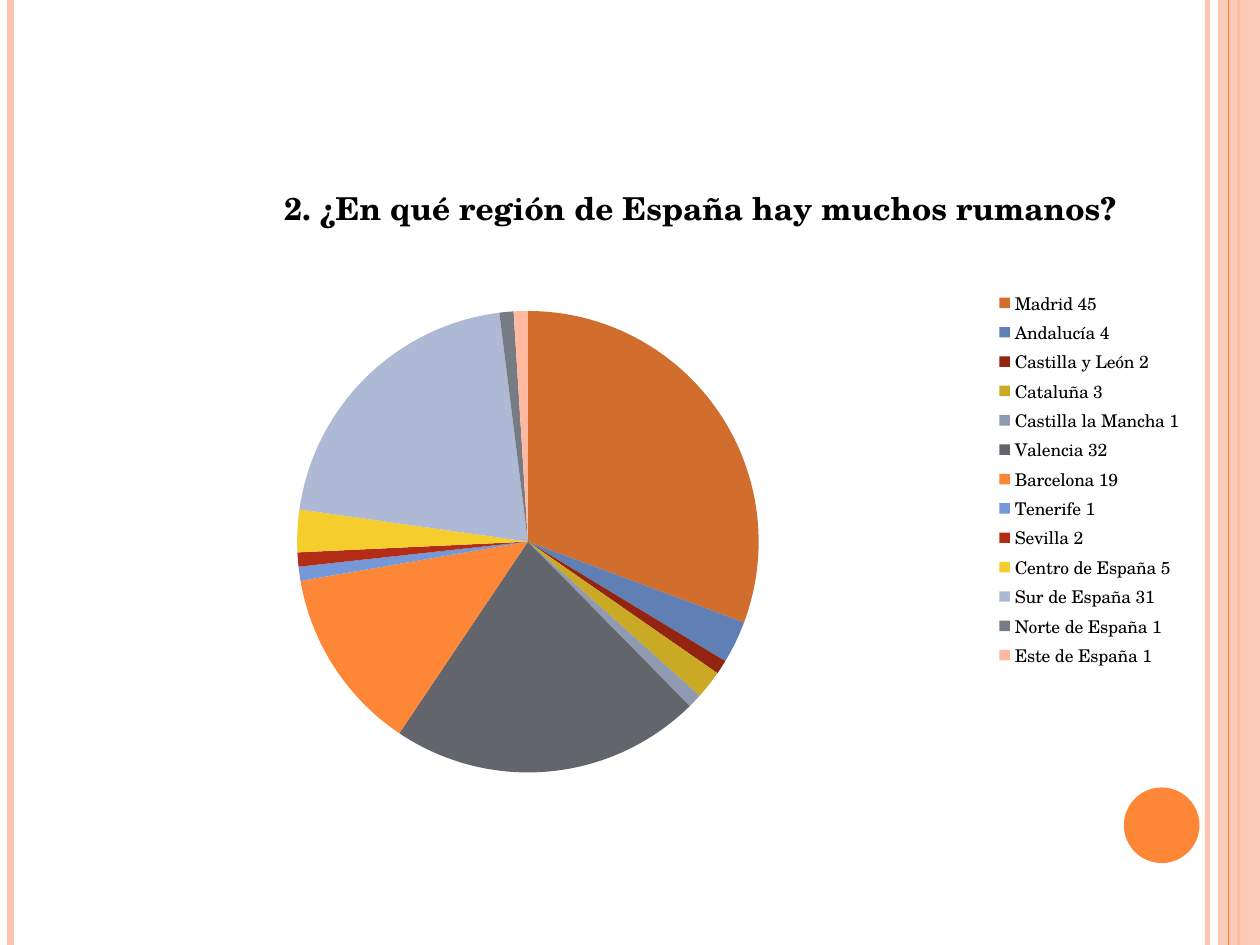
import pptx
import pptx.chart.data
import pptx.dml.color
import pptx.enum.chart
import pptx.enum.shapes
import pptx.oxml
import pptx.oxml.ns
import pptx.util

Pt = pptx.util.Pt
RGB = pptx.dml.color.RGBColor.from_string
qn = pptx.oxml.ns.qn
SHAPE = pptx.enum.shapes.MSO_SHAPE

THEME = {
    "font": "TeX Gyre Schola",
    "title_size": 18,
    "legend_size": 10,
    "text": "000000",
    "pink": "FEC3AE",
    "orange": "FE8637",
    "slices": ["D26E2D", "607FB4", "932412", "CAA925", "909AB0", "62666C", "FE8637",
               "7598D9", "B32C16", "F5CD2D", "AEBAD5", "777C84", "FFB9A0"],
}


def set_opacity(owner, percent):
    color = next(owner.iter(qn("a:srgbClr")))
    color.append(color.makeelement(qn("a:alpha"), {"val": str(percent * 1000)}))


def place(element, index, **fractions):
    """Give a chart part a manual layout, in fractions of the chart area."""
    for old in element.findall(qn("c:layout")):
        element.remove(old)
    layout = element.makeelement(qn("c:layout"), {})
    manual = layout.makeelement(qn("c:manualLayout"), {})
    layout.append(manual)
    settings = {"xMode": "edge", "yMode": "edge", **fractions}
    if element.tag == qn("c:plotArea"):
        settings = {"layoutTarget": "inner", **settings}
    for name, value in settings.items():
        manual.append(manual.makeelement(qn("c:" + name), {"val": str(value)}))
    element.insert(index, layout)


prs = pptx.Presentation()
prs.slide_width, prs.slide_height = Pt(720), Pt(540)
s = prs.slides.add_slide(prs.slide_layouts[6])

# Side stripes, with the band between the lines of the right edge
for x, color, width, opacity in [
    (690, "pink", 3, 93),
    (6, "pink", 4.5, 100),
    (707.76, "orange", 1.5, 100),
    (None, "pink", None, 87),
    (702, "orange", 0.75, 100),
]:
    if x is None:
        sp = s.shapes.add_shape(SHAPE.RECTANGLE, Pt(696), 0, Pt(24), Pt(540))
        sp.shadow.inherit = False
        sp.fill.solid()
        sp.fill.fore_color.rgb = RGB(THEME[color])
        sp.line.fill.background()
    else:
        sp = s.shapes.add_connector(
            pptx.enum.shapes.MSO_CONNECTOR.STRAIGHT, Pt(x), 0, Pt(x), Pt(540))
        sp.line.color.rgb = RGB(THEME[color])
        sp.line.width = Pt(width)
        pr = sp._element.spPr
        pr.append(pr.makeelement(qn("a:effectLst"), {}))
    if opacity < 100:
        set_opacity(sp._element.spPr, opacity)

dot = s.shapes.add_shape(SHAPE.OVAL, Pt(642.24), Pt(450), Pt(43.2), Pt(43.2))
dot.shadow.inherit = False
dot.fill.solid()
dot.fill.fore_color.rgb = RGB(THEME["orange"])
dot.line.fill.background()

# Pie of the answers: the legend shows the counts, the slices their percentages
answers = {
    "Madrid": 45, "Andalucía": 4, "Castilla y León": 2, "Cataluña": 3,
    "Castilla la Mancha": 1, "Valencia": 32, "Barcelona": 19, "Tenerife": 1,
    "Sevilla": 2, "Centro de España": 5, "Sur de España": 31,
    "Norte de España": 1, "Este de España": 1,
}
total = sum(answers.values())
data = pptx.chart.data.CategoryChartData()
data.categories = [f"{region} {count}" for region, count in answers.items()]
data.add_series("Series 1", [round(100 * count / total) for count in answers.values()])

chart = s.shapes.add_chart(pptx.enum.chart.XL_CHART_TYPE.PIE,
                           Pt(36), Pt(95.76), Pt(648), Pt(356.4), data).chart
chart.font.name = THEME["font"]
chart.font.size = Pt(THEME["legend_size"])
chart.font.color.rgb = RGB(THEME["text"])

plot = chart.plots[0]
plot.vary_by_categories = True
for i, color in enumerate(THEME["slices"]):
    fmt = plot.series[0].points[i].format
    fmt.fill.solid()
    fmt.fill.fore_color.rgb = RGB(color)
    fmt.line.fill.background()

chart.has_title = True
tf = chart.chart_title.text_frame
tf.text = "2. ¿En qué región de España hay muchos rumanos?"
r = tf.paragraphs[0].runs[0]
r.font.name = THEME["font"]
r.font.size = Pt(THEME["title_size"])
r.font.bold = True
r.font.color.rgb = RGB(THEME["text"])

chart.has_legend = True
chart.legend.position = pptx.enum.chart.XL_LEGEND_POSITION.RIGHT
chart.legend.include_in_layout = False

place(chart.chart_title._element, 1, x=0.19, y=0.01)
place(chart.legend._element, 1, x=0.82, y=0.19, w=0.17, h=0.62)
place(chart._chartSpace.chart.plotArea, 0, x=0.2, y=0.23, w=0.42, h=0.74)

prs.save("out.pptx")
